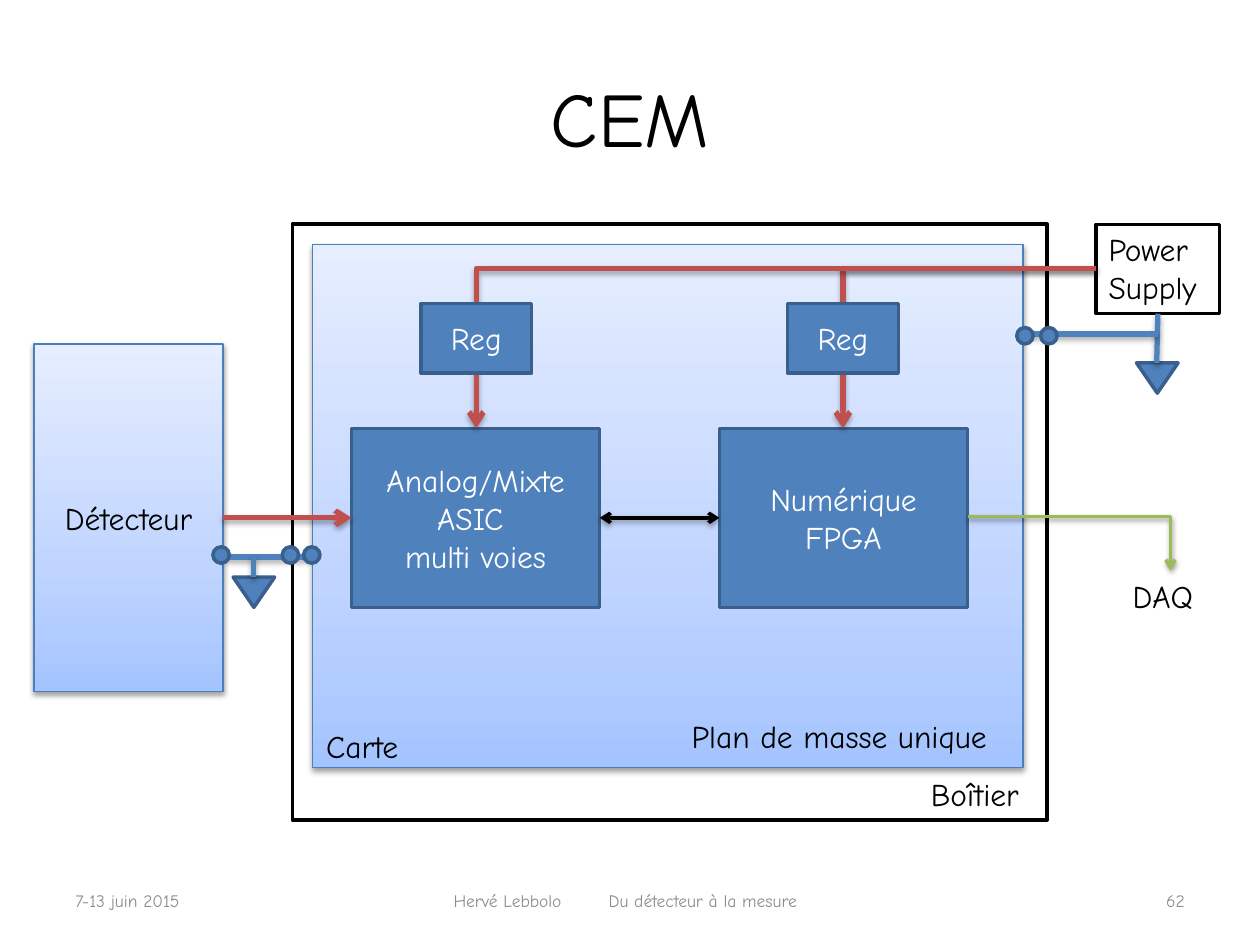
"""Build the CEM slide: detector, board, power supply and grounding."""
import copy

import pptx
import pptx.dml.color
import pptx.enum.shapes
import pptx.enum.text
import pptx.oxml
import pptx.oxml.ns
import pptx.util
from lxml import etree

Inches = pptx.util.Inches
Pt = pptx.util.Pt
RGBColor = pptx.dml.color.RGBColor
Preset = pptx.enum.shapes.MSO_SHAPE
Connector = pptx.enum.shapes.MSO_CONNECTOR
Align = pptx.enum.text.PP_ALIGN
Anchor = pptx.enum.text.MSO_ANCHOR
qn = pptx.oxml.ns.qn

BLACK = RGBColor(0x00, 0x00, 0x00)
WHITE = RGBColor(0xFF, 0xFF, 0xFF)
GREY = RGBColor(0x8C, 0x8C, 0x8C)
BLUE = RGBColor(0x4F, 0x81, 0xBD)
DARK_BLUE = RGBColor(0x3A, 0x5F, 0x8C)
EDGE_BLUE = RGBColor(0x4B, 0x7E, 0xBC)
RED = RGBColor(0xC0, 0x50, 0x4D)
GREEN = RGBColor(0x9B, 0xBB, 0x59)
GRADIENT = [(0, RGBColor(0xA4, 0xC4, 0xFF)), (0.35, RGBColor(0xBF, 0xD4, 0xFF)),
            (1, RGBColor(0xE6, 0xEE, 0xFF))]
SHADOW = ('<a:effectLst %s><a:outerShdw blurRad="40000" dist="{}" dir="5400000" rotWithShape="0">'
          '<a:srgbClr val="000000"><a:alpha val="{}"/></a:srgbClr></a:outerShdw></a:effectLst>'
          % pptx.oxml.ns.nsdecls("a"))
SOFT = SHADOW.format(20000, 38000)
DEEP = SHADOW.format(23000, 35000)

FRAME = {"fill": WHITE, "line": BLACK, "width": 2}
BLOCK = {"fill": BLUE, "line": DARK_BLUE, "width": 2}
PANEL = {"fill": GRADIENT, "line": EDGE_BLUE, "width": 0.75}
CENTRED = {"vertical_anchor": Anchor.MIDDLE, "word_wrap": True}
LABEL = {"vertical_anchor": Anchor.TOP, "word_wrap": False}

deck = pptx.Presentation()
deck.slide_width, deck.slide_height = Inches(10), Inches(7.5)
page = deck.slides.add_slide(deck.slide_layouts[6])


def add_box(place, look=None, lines=(), color=BLACK, size=18, align=Align.CENTER,
            frame=CENTRED, preset=Preset.RECTANGLE):
    place = [Inches(value) for value in place]
    if look is None:
        box = page.shapes.add_textbox(*place)
    else:
        box = page.shapes.add_shape(preset, *place)
        box.line.color.rgb = look["line"]
        box.line.width = Pt(look["width"])
        if look is PANEL:
            box.fill.gradient()
            box.fill.gradient_angle = 90
            stops = box._element.spPr.find(".//" + qn("a:gsLst"))
            stops.insert(1, copy.deepcopy(stops[0]))
            for stop, (position, shade) in zip(box.fill.gradient_stops, look["fill"]):
                stop.position = position
                stop.color.rgb = shade
            box._element.spPr.append(pptx.oxml.parse_xml(SOFT))
        else:
            box.fill.solid()
            box.fill.fore_color.rgb = look["fill"]
            box.shadow.inherit = False
    for name, value in frame.items():
        setattr(box.text_frame, name, value)
    for index, line in enumerate(lines):
        para = box.text_frame.paragraphs[0] if index == 0 else box.text_frame.add_paragraph()
        para.alignment = align
        span = para.add_run()
        span.text = line
        span.font.color.rgb = color
        for name, value in {"name": "Comic Neue", "size": Pt(size)}.items():
            setattr(span.font, name, value)
    return box


def add_line(start, end, color, width=3, shadow=DEEP, arrows=(), bent=False):
    kind = Connector.ELBOW if bent else Connector.STRAIGHT
    wire = page.shapes.add_connector(kind, *[Inches(value) for value in start + end])
    wire.line.color.rgb = color
    wire.line.width = Pt(width)
    outline = wire.line._get_or_add_ln()
    for tip in arrows:
        etree.SubElement(outline, qn("a:" + tip), type="arrow")
    properties = wire._element.spPr
    if bent:
        properties.find(qn("a:prstGeom")).set("prst", "bentConnector2")
    properties.append(pptx.oxml.parse_xml(shadow))
    return wire


add_box((2.32, 1.78, 5.99, 4.73), FRAME)
add_box((2.48, 1.94, 5.64, 4.15), PANEL)
add_box((0.5, 0.3, 9, 1.25), lines=["CEM"], size=44)

add_box((0.5, 6.95, 1.51, 0.4), lines=["7-13 juin 2015"], color=GREY, size=10, align=Align.LEFT)
footer = add_box((2.32, 6.95, 5.28, 0.4), color=GREY, size=10, align=Align.LEFT,
                 lines=["Hervé Lebbolo\tDu détecteur à la mesure"])
footer.text_frame.margin_left = Inches(1.28)
tabs = etree.SubElement(footer.text_frame.paragraphs[0]._p.get_or_add_pPr(), qn("a:tabLst"))
etree.SubElement(tabs, qn("a:tab"), pos=str(Inches(1.23)), algn="l")
add_box((8.31, 6.95, 1.19, 0.4), lines=["62"], color=GREY, size=10, align=Align.RIGHT)

fpga = add_box((5.71, 3.4, 1.97, 1.42), BLOCK, ["Numérique", "FPGA"], WHITE)
detector = add_box((0.27, 2.73, 1.5, 2.76), PANEL, ["Détecteur"])
asic = add_box((2.79, 3.4, 1.97, 1.42), BLOCK, ["Analog/Mixte", "ASIC ", "multi voies"], WHITE)
supply = add_box((8.7, 1.78, 0.98, 0.71), FRAME, ["Power", "Supply"],
                 align=Align.LEFT, frame=LABEL)

for center in (6.69, 3.78):
    add_line((8.7, 2.13), (center, 3.4), RED, arrows=["tailEnd"], bent=True)

for left, top in ((9.02, 2.88), (1.85, 4.58)):
    ground = add_box((left, top, 0.33, 0.24), BLOCK, preset=Preset.ISOSCELES_TRIANGLE)
    ground.rotation = 180

supply_ground = add_line((9.18, 2.88), (9.19, 2.49), BLUE)
supply_ground.end_connect(supply, 2)
for start, end in (((8.12, 2.65), (9.19, 2.65)),
                   ((1.77, 4.42), (2.48, 4.42)),
                   ((2.01, 4.58), (2.01, 4.42))):
    add_line(start, end, BLUE)

signal = add_line((1.77, 4.11), (2.79, 4.11), RED, arrows=["tailEnd"])
signal.begin_connect(detector, 3)
signal.end_connect(asic, 1)
exchange = add_line((4.76, 4.11), (5.71, 4.11), BLACK, 2, SOFT, ["headEnd", "tailEnd"])
exchange.begin_connect(asic, 3)
exchange.end_connect(fpga, 1)

for left, top in ((8.26, 2.6), (8.07, 2.6), (1.69, 4.34), (2.24, 4.34), (2.41, 4.34)):
    add_box((left, top, 0.13, 0.13), BLOCK, preset=Preset.OVAL)

for text, left, top, width in (("Plan de masse unique", 5.39, 5.64, 2.62),
                               ("Boîtier", 7.29, 6.1, 1.01),
                               ("Carte", 2.49, 5.72, 0.86),
                               ("DAQ", 8.89, 4.53, 0.79)):
    add_box((left, top, width, 0.4), lines=[text], align=Align.LEFT, frame=LABEL)

add_line((7.68, 4.1), (9.29, 4.53), GREEN, 2, SOFT, ["tailEnd"], bent=True)
for left in (3.34, 6.25):
    add_box((left, 2.41, 0.88, 0.55), BLOCK, ["Reg"], WHITE)

deck.save("out.pptx")
